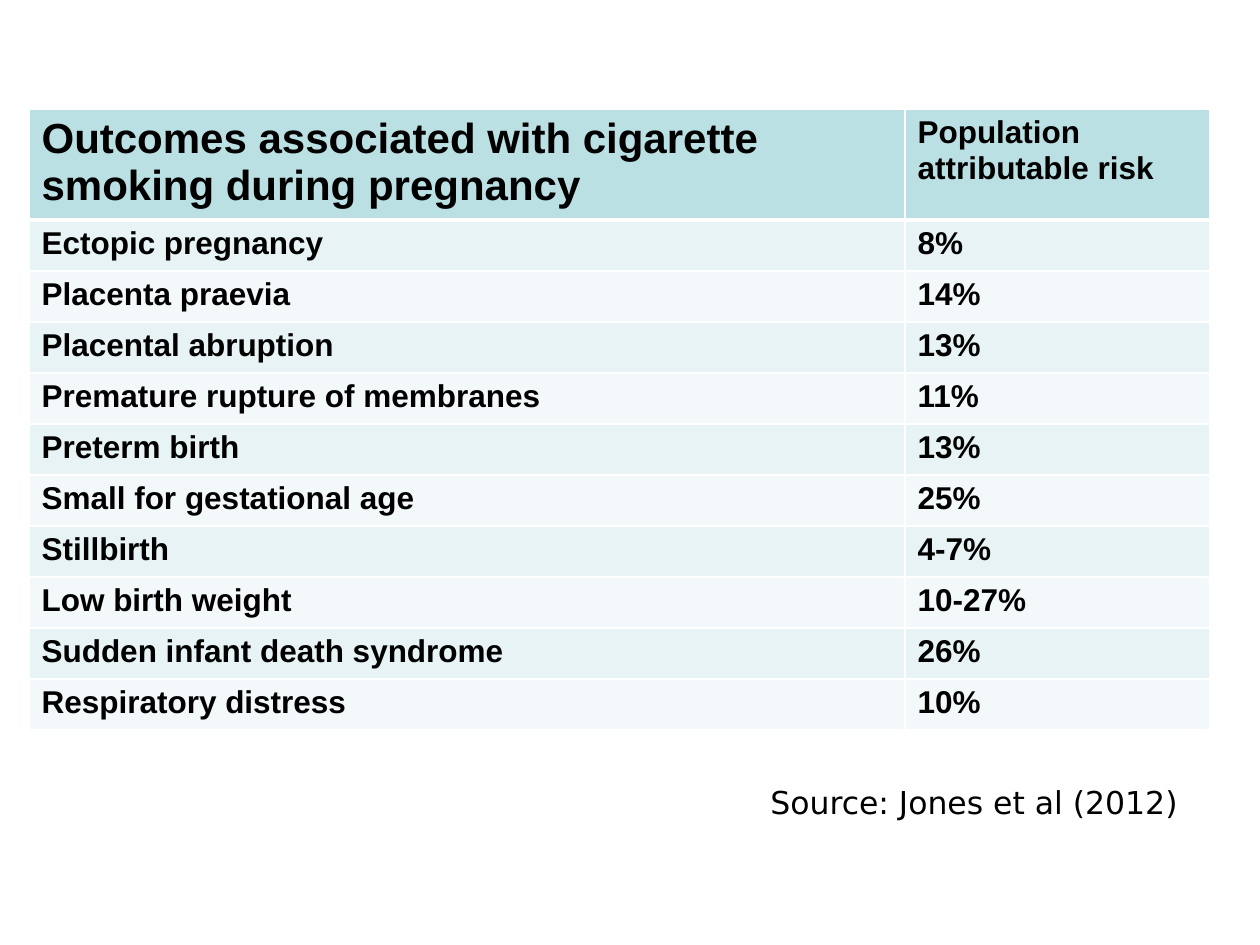
"""Build a slide with a table of smoking risks in pregnancy."""
from dataclasses import dataclass

from lxml import etree
from pptx import Presentation
from pptx.dml.color import RGBColor
from pptx.enum.text import MSO_AUTO_SIZE
from pptx.oxml.ns import qn
from pptx.util import Pt

AUTO_FIT = MSO_AUTO_SIZE.SHAPE_TO_FIT_TEXT
SCALE = 914400 / 126
COLS = (876, 305)
HEAD_H, ROW_H = 111, 51
HEAD_FILL = "BBE0E3"
BANDS = ("E7F3F4", "F3F9FA")
WHITE, BLACK = "FFFFFF", "000000"


@dataclass
class Risk:
    """One outcome and its share of risk."""
    name: str
    share: str


HEAD = Risk("Outcomes associated with cigarette smoking during pregnancy",
            "Population attributable risk")
RISKS = [
    Risk("Ectopic pregnancy", "8%"),
    Risk("Placenta praevia", "14%"),
    Risk("Placental abruption", "13%"),
    Risk("Premature rupture of membranes", "11%"),
    Risk("Preterm birth", "13%"),
    Risk("Small for gestational age", "25%"),
    Risk("Stillbirth", "4-7%"),
    Risk("Low birth weight", "10-27%"),
    Risk("Sudden infant death syndrome", "26%"),
    Risk("Respiratory distress", "10%"),
]


def px(size: int) -> int:
    """Turn pixels into EMU."""
    return round(size * SCALE)


def color(code: str) -> RGBColor:
    """Turn a hex string into a colour."""
    return RGBColor.from_string(code)


def write(frame, text: str, size: int, face: str, bold: bool) -> None:
    """Put one styled paragraph in a text frame."""
    frame.text = text
    font = frame.paragraphs[0].font
    font.name, font.size, font.bold = face, Pt(size), bold
    font.color.rgb = color(BLACK)


def edge(cell, side: str, width: int) -> None:
    """Draw one white border of a cell."""
    props = cell._tc.get_or_add_tcPr()
    line = etree.SubElement(props, qn(f"a:ln{side}"), w=str(Pt(width)))
    fill = etree.SubElement(line, qn("a:solidFill"))
    etree.SubElement(fill, qn("a:srgbClr"), val=WHITE)


def paint(cell, text: str, size: int, fill: str, top: int, base: int) -> None:
    """Fill, frame and label one cell."""
    for side, width in (("L", 1), ("R", 1), ("T", top), ("B", base)):
        edge(cell, side, width)
    cell.fill.solid()
    cell.fill.fore_color.rgb = color(fill)
    write(cell.text_frame, text, size, "Arial", True)


def add_risks(slide, left: int, top: int) -> None:
    """Add the table of risks."""
    count = len(RISKS)
    table = slide.shapes.add_table(
        count + 1, len(COLS), px(left), px(top),
        px(sum(COLS)), px(HEAD_H + count * ROW_H)).table
    for col, width in zip(table.columns, COLS):
        col.width = px(width)
    for i, risk in enumerate([HEAD, *RISKS]):
        table.rows[i].height = px(ROW_H if i else HEAD_H)
        fill = BANDS[(i - 1) % 2] if i else HEAD_FILL
        rule = 3 if i == 1 else 1
        base = 1 if i else 3
        paint(table.cell(i, 0), risk.name, 18 if i else 24, fill, rule, base)
        paint(table.cell(i, 1), risk.share, 18, fill, rule, base)


def add_source(slide) -> None:
    """Add the source line under the table."""
    box = slide.shapes.add_textbox(px(758), px(777), px(454), px(50))
    frame = box.text_frame
    frame.word_wrap = False
    frame.auto_size = AUTO_FIT
    write(frame, "Source: Jones et al (2012)", 18, "DejaVu Sans", False)


def main() -> None:
    """Build and save the slide."""
    deck = Presentation()
    deck.slide_width, deck.slide_height = px(1260), px(945)
    slide = deck.slides.add_slide(deck.slide_layouts[6])
    add_risks(slide, 29, 109)
    add_source(slide)
    deck.save("out.pptx")


if __name__ == "__main__":
    main()
